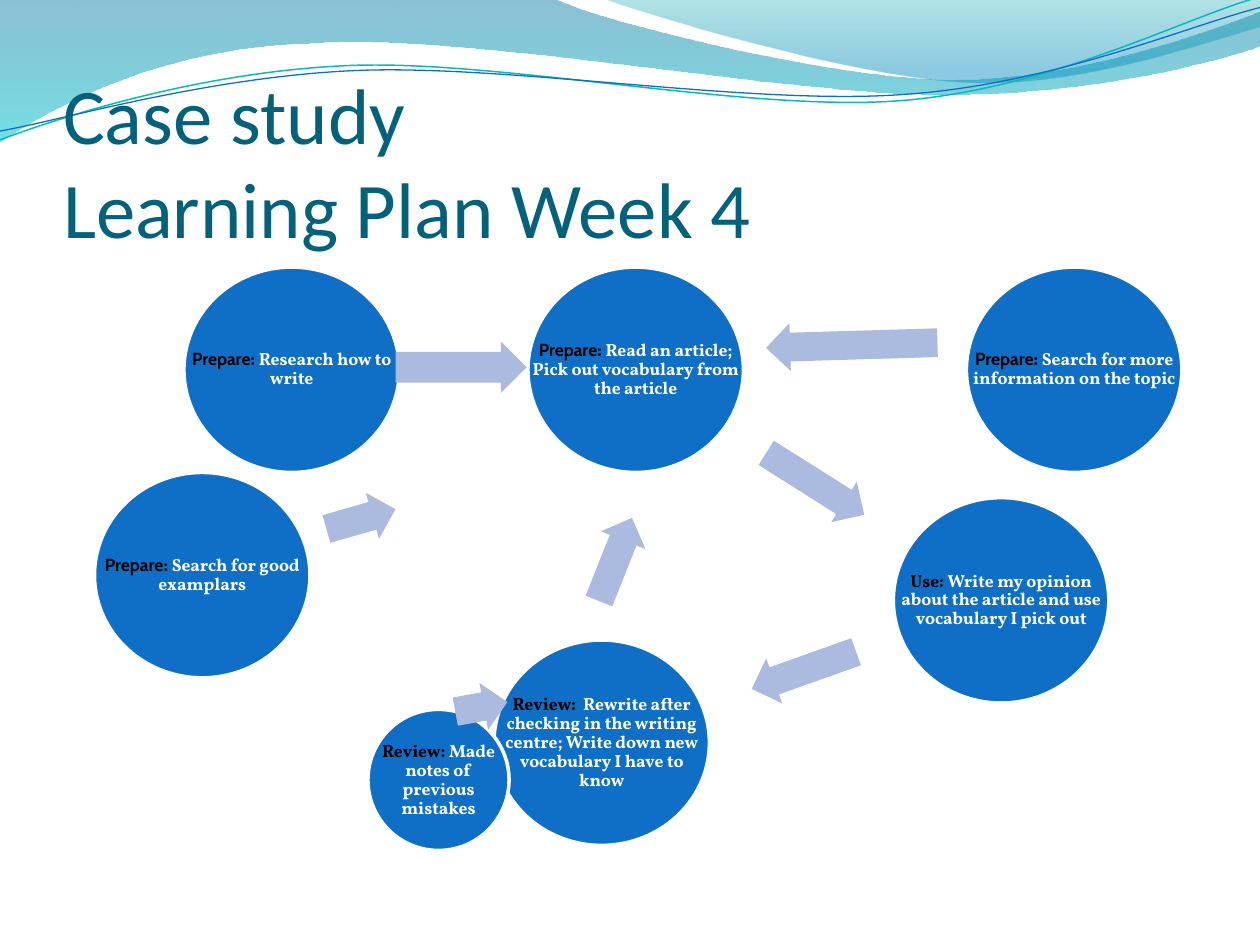
"""Build the Week 4 learning plan slide with its circles, arrows and wave header."""
import math
from dataclasses import dataclass

import pptx
import pptx.dml.color
import pptx.enum.shapes
import pptx.enum.text
import pptx.oxml.ns
import pptx.util
from lxml import etree

Inches = pptx.util.Inches
Pt = pptx.util.Pt
RGBColor = pptx.dml.color.RGBColor
Shape = pptx.enum.shapes.MSO_SHAPE
qn = pptx.oxml.ns.qn

BLUE = RGBColor(0x0F, 0x6F, 0xC6)
ARROW_BLUE = RGBColor(0xAB, 0xBB, 0xDF)
TITLE_TEAL = RGBColor(0x04, 0x61, 0x7B)
LINE_TEAL = RGBColor(0x0A, 0xB8, 0xBF)
WHITE = RGBColor(0xFF, 0xFF, 0xFF)
BLACK = RGBColor(0x00, 0x00, 0x00)
STRAND_TILT = 357.3

Point = tuple[float, float]
Segment = list[Point]


@dataclass
class Step:
    labels: list[tuple[str, str]]
    activity: str
    left: float
    top: float
    width: float = 1.71
    height: float = 1.63


@dataclass
class Arrow:
    left: float
    top: float
    width: float
    rotation: float
    height: float = 0.38


@dataclass
class Stop:
    color: RGBColor
    position: float
    opacity: int


@dataclass
class Band:
    start: Point
    segments: list[Segment]
    stops: tuple[Stop, Stop]


@dataclass
class Strand:
    start: Point
    segments: list[Segment]
    center: Point
    color: RGBColor
    weight: float


BANDS = [
    Band((0, 0),
         [[(4.4, -0.01)],
          [(4.76, 0.17), (6.64, 0.63), (7.58, 0.63)],
          [(8.53, 0.63), (9.58, 0.26), (10, 0.09)],
          [(10.01, 0.36)],
          [(9.83, 0.44), (8.7, 0.76), (7.46, 0.75)],
          [(6.22, 0.75), (3.82, 0.28), (2.57, 0.34)],
          [(1.29, 0.36), (0.46, 0.83), (-0.01, 1.13)]],
         (Stop(RGBColor(0x00, 0x74, 0xA1), 0, 45), Stop(RGBColor(0x00, 0xC6, 0xCF), 1, 55))),
    Band((4.79, -0.01),
         [[(5.09, 0.11), (6.82, 0.62), (7.69, 0.65)],
          [(8.56, 0.69), (9.61, 0.32), (10, 0.21)],
          [(10, 0)]],
         (Stop(RGBColor(0x00, 0xA1, 0xA9), 0, 30), Stop(RGBColor(0x00, 0x8B, 0xBF), 0.8, 45))),
]

STRANDS = [
    Strand((0, 1.11),
           [[(0.48, 0.93), (1.58, 0.57), (2.77, 0.52)],
            [(3.95, 0.47), (5.93, 0.89), (7.13, 0.8)],
            [(8.33, 0.71), (9.38, 0.15), (9.98, -0.02)]],
           (4.99, 0.58), LINE_TEAL, 0.85),
    Strand((0, 1.04),
           [[(0.47, 0.96), (1.64, 0.61), (2.83, 0.56)],
            [(4.03, 0.51), (5.97, 0.84), (7.17, 0.75)],
            [(8.36, 0.67), (9.41, 0.21), (10, 0.06)]],
           (5, 0.59), BLUE, 0.75),
]

PREPARE = [("Prepare", "Cabin"), (": ", "Vollkorn")]

STEPS = [
    Step(PREPARE, "Read an article; Pick out vocabulary from the article", 4.19, 2.12),
    Step([("Use: ", "Vollkorn")],
         "Write my opinion about the article and use vocabulary I pick out", 7.09, 3.95),
    Step([("Review:  ", "Vollkorn")], "Rewrite after checking in the writing centre; "
         "Write down new vocabulary I have to know", 3.92, 5.08),
    Step(PREPARE, "Research how to write", 1.46, 2.12),
    Step(PREPARE, "Search for more information on the topic", 7.67, 2.12),
    Step(PREPARE, "Search for good examplars", 0.75, 3.75),
    Step([("Review: ", "Vollkorn")], "Made notes of previous mistakes", 2.92, 5.63, 1.12, 1.12),
]

ARROWS = [
    Arrow(6.01, 3.65, 0.92, 32.3),
    Arrow(5.94, 5.13, 0.88, 160.4),
    Arrow(4.53, 4.25, 0.71, 291.7),
    Arrow(3.14, 2.71, 1.04, 0, 0.41),
    Arrow(6.08, 2.55, 1.36, 178.3),
    Arrow(2.58, 3.93, 0.57, 344),
    Arrow(3.61, 5.42, 0.42, 349.6),
]


def draw_outline(page, start: Point, segments: list[Segment], close: bool):
    """Draw a freeform whose three-point segments are cubic curves."""
    corners = [(Inches(x), Inches(y)) for segment in segments for x, y in segment]
    builder = page.shapes.build_freeform(Inches(start[0]), Inches(start[1]))
    builder.add_line_segments(corners, close=close)
    outline = builder.convert_to_shape()
    outline.shadow.inherit = False
    lines = iter(list(outline.element.iter(qn("a:lnTo"))))
    for segment in segments:
        pieces = [next(lines) for _ in segment]
        if len(pieces) == 3:
            curve = etree.Element(qn("a:cubicBezTo"))
            pieces[0].addprevious(curve)
            for piece in pieces:
                curve.append(piece[0])
                piece.getparent().remove(piece)
    return outline


def draw_band(page, band: Band) -> None:
    """Draw one translucent gradient band of the header."""
    outline = draw_outline(page, band.start, band.segments, True)
    outline.line.fill.background()
    outline.fill.gradient()
    outline.fill.gradient_angle = 270
    for target, stop in zip(outline.fill.gradient_stops, band.stops):
        target.color.rgb = stop.color
        target.position = stop.position
    for color, stop in zip(outline.element.spPr.iter(qn("a:srgbClr")), band.stops):
        etree.SubElement(color, qn("a:alpha"), val=str(stop.opacity * 1000))


def turn(point: Point, center: Point, degrees: float) -> Point:
    """Turn a point clockwise around a center."""
    angle = math.radians(degrees)
    x, y = point[0] - center[0], point[1] - center[1]
    return (center[0] + x * math.cos(angle) - y * math.sin(angle),
            center[1] + x * math.sin(angle) + y * math.cos(angle))


def draw_strand(page, strand: Strand) -> None:
    """Draw one thin tilted curve of the header."""
    start = turn(strand.start, strand.center, -STRAND_TILT)
    segments = [[turn(point, strand.center, -STRAND_TILT) for point in segment]
                for segment in strand.segments]
    outline = draw_outline(page, start, segments, False)
    outline.rotation = STRAND_TILT
    outline.fill.background()
    outline.line.color.rgb = strand.color
    outline.line.width = Pt(strand.weight)


def add_span(para, text: str, font: str, size: float, color: RGBColor, bold: bool) -> None:
    """Add one formatted run to a paragraph."""
    span = para.add_run()
    span.text = text
    span.font.name = font
    span.font.size = Pt(size)
    span.font.bold = bold
    span.font.color.rgb = color


def set_margins(frame, left: float, top: float, right: float, bottom: float) -> None:
    """Set the four text margins in inches."""
    frame.margin_left, frame.margin_top = Inches(left), Inches(top)
    frame.margin_right, frame.margin_bottom = Inches(right), Inches(bottom)


def draw_step(page, step: Step) -> None:
    """Draw a circle and the text laid across its full width."""
    area = [Inches(n) for n in (step.left, step.top, step.width, step.height)]
    circle = page.shapes.add_shape(Shape.OVAL, *area)
    circle.shadow.inherit = False
    circle.fill.solid()
    circle.fill.fore_color.rgb = BLUE
    circle.line.color.rgb = WHITE
    circle.line.width = Pt(2)
    frame = page.shapes.add_textbox(*area).text_frame
    frame.word_wrap = True
    frame.vertical_anchor = pptx.enum.text.MSO_ANCHOR.MIDDLE
    set_margins(frame, 0.02, 0.01, 0.02, 0.01)
    para = frame.paragraphs[0]
    para.alignment = pptx.enum.text.PP_ALIGN.CENTER
    para.line_spacing = 0.9
    for text, font in step.labels:
        add_span(para, text, font, 10, BLACK, True)
    add_span(para, step.activity, "Vollkorn", 10, WHITE, True)


def draw_arrow(page, arrow: Arrow) -> None:
    """Draw a turned block arrow."""
    area = [Inches(n) for n in (arrow.left, arrow.top, arrow.width, arrow.height)]
    block = page.shapes.add_shape(Shape.RIGHT_ARROW, *area)
    block.adjustments[0], block.adjustments[1] = 0.6, 0.5
    block.rotation = arrow.rotation
    block.shadow.inherit = False
    block.fill.solid()
    block.fill.fore_color.rgb = ARROW_BLUE
    block.line.fill.background()


def write_title(page) -> None:
    """Place and fill the title above the header waves."""
    title = page.shapes.title
    page.shapes.element.append(title.element)
    title.left, title.top, title.width, title.height = map(Inches, (0.5, 0.77, 9, 1.25))
    frame = title.text_frame
    frame.word_wrap = True
    frame.auto_size = pptx.enum.text.MSO_AUTO_SIZE.NONE
    frame.vertical_anchor = pptx.enum.text.MSO_ANCHOR.BOTTOM
    set_margins(frame, 0, 0.05, 0, 0)
    para = frame.paragraphs[0]
    para.alignment = pptx.enum.text.PP_ALIGN.LEFT
    add_span(para, "Case study", "Calibri", 45, TITLE_TEAL, False)
    para.add_line_break()
    add_span(para, "Learning Plan Week 4", "Calibri", 45, TITLE_TEAL, False)


def main() -> None:
    """Build and save the deck."""
    deck = pptx.Presentation()
    deck.slide_width, deck.slide_height = Inches(10), Inches(7.5)
    page = deck.slides.add_slide(deck.slide_layouts[5])
    for band in BANDS:
        draw_band(page, band)
    for strand in STRANDS:
        draw_strand(page, strand)
    write_title(page)
    for step, arrow in zip(STEPS, ARROWS):
        draw_step(page, step)
        draw_arrow(page, arrow)
    deck.save("out.pptx")


if __name__ == "__main__":
    main()
